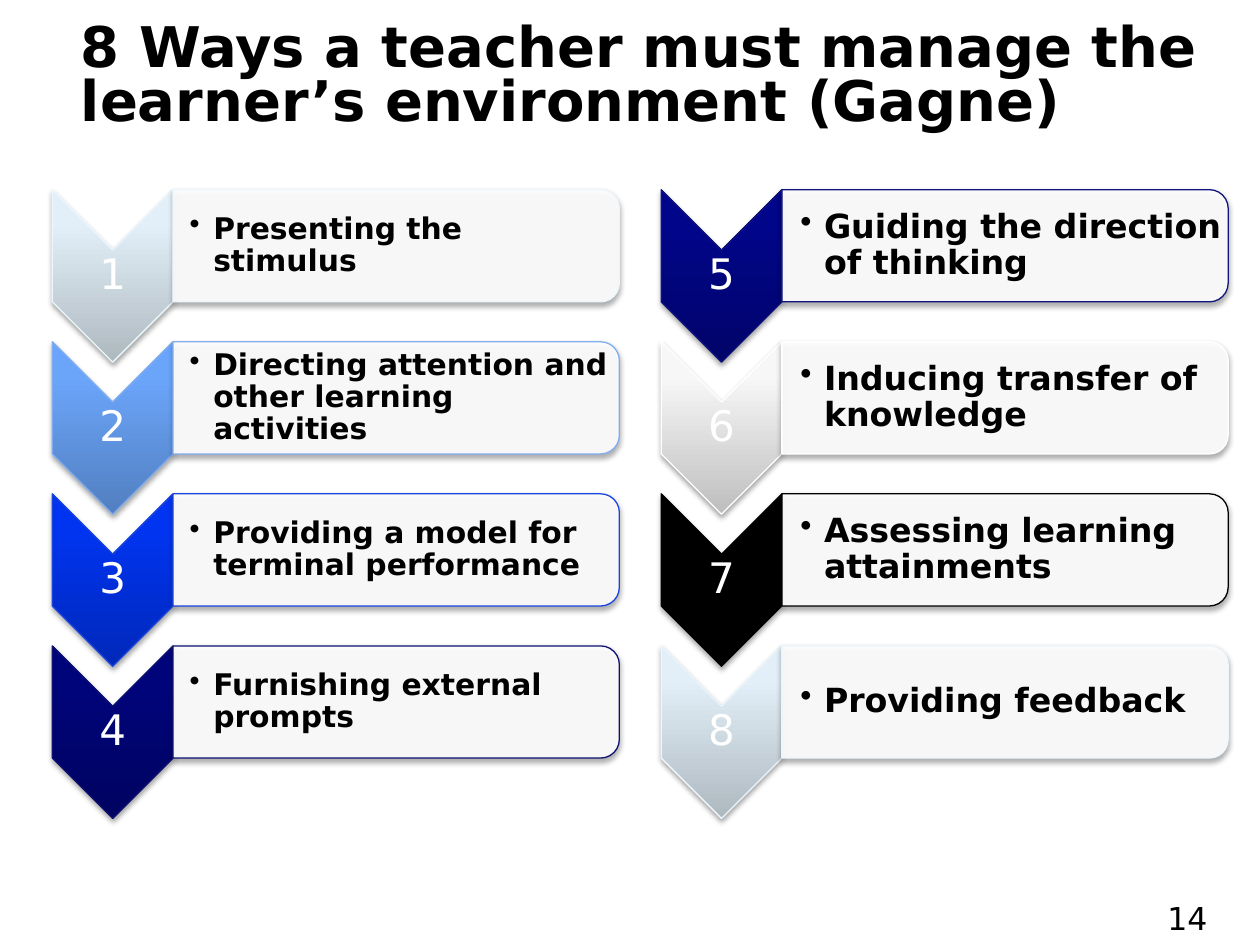
from pptx import Presentation
from pptx.dml.color import RGBColor
from pptx.enum.shapes import MSO_SHAPE
from pptx.enum.text import MSO_ANCHOR, MSO_AUTO_SIZE, PP_ALIGN
from pptx.oxml import parse_xml
from pptx.oxml.ns import nsdecls
from pptx.util import Pt

CHEVRON, ROUNDED = MSO_SHAPE.CHEVRON, MSO_SHAPE.ROUND_2_SAME_RECTANGLE
TOP, MIDDLE = MSO_ANCHOR.TOP, MSO_ANCHOR.MIDDLE
LEFT, CENTER = PP_ALIGN.LEFT, PP_ALIGN.CENTER
NO_AUTOFIT = MSO_AUTO_SIZE.NONE
FONT = "DejaVu Sans"

# Content: text, gradient stops at 0, 80 and 100 %, outline
TITLE = "8 Ways a teacher must manage the learner’s environment (Gagne)"
PAGE_NUMBER = "14"
ICE = ("AEB8BF", "E2EFF8", "E3F0F9"), "ECF6FD"
COLUMNS = [
    dict(left=29.9, size=17, inset=9.5, steps=[
        ("Presenting the stimulus", *ICE),
        ("Directing attention and other learning activities",
         ("527FC0", "6BA5FA", "69A5FE"), "80ADF1"),
        ("Providing a model for terminal performance",
         ("0028B9", "0034F0", "0034F1"), "1A44DE"),
        ("Furnishing external prompts",
         ("00035F", "00047B", "00047C"), "0E1171"),
    ]),
    dict(left=377.8, size=19, inset=10.6, steps=[
        ("Guiding the direction of thinking",
         ("010469", "010589", "00048A"), "11147D"),
        ("Inducing transfer of knowledge",
         ("BEBEBE", "F7F7F7", "F8F8F8"), "FFFFFF"),
        ("Assessing learning attainments", ("000000",) * 3, "000000"),
        ("Providing feedback", *ICE),
    ]),
]

# Layout, in points
FIRST_TOP, ROW_STEP = 108.4, 86.9
CHEVRON_WIDTH, CHEVRON_HEIGHT = 69, 98.6
CARD_WIDTH, CARD_HEIGHT = 255, 64.1


def color(value):
    return RGBColor.from_string(value)


def write(box, text, size, bold=False, ink="000000", align=LEFT, anchor=MIDDLE,
          insets=(7.2, 3.6, 7.2, 3.6), spacing=None, margin=0, bullet=False):
    frame = box.text_frame
    frame.word_wrap = True
    frame.auto_size = NO_AUTOFIT
    frame.vertical_anchor = anchor
    (frame.margin_left, frame.margin_top,
     frame.margin_right, frame.margin_bottom) = map(Pt, insets)
    para = frame.paragraphs[0]
    para.alignment = align
    properties = para._p.get_or_add_pPr()
    properties.set("marL", str(Pt(margin)))
    properties.set("indent", str(Pt(-margin) if bullet else 0))
    if bullet:
        properties.append(parse_xml(f'<a:buChar {nsdecls("a")} char="•"/>'))
    if spacing:
        para.line_spacing = spacing
    span = para.add_run()
    span.text = text
    span.font.name, span.font.size, span.font.bold = FONT, Pt(size), bold
    span.font.color.rgb = color(ink)


def add_text(shapes, left, top, width, height, text, **style):
    box = shapes.add_textbox(Pt(left), Pt(top), Pt(width), Pt(height))
    write(box, text, **style)


def add_turned(shapes, kind, left, top, width, height, outline):
    """Add a shape turned by 90 degrees that covers the given area."""
    shift = (width - height) / 2
    shape = shapes.add_shape(kind, Pt(left + shift), Pt(top - shift),
                             Pt(height), Pt(width))
    shape.rotation = 90
    shape.fill.solid()
    shape.fill.fore_color.rgb = color("FFFFFF")
    shape.line.color.rgb = color(outline)
    shape.line.width = Pt(0.75)
    shape.shadow.inherit = False
    shape._element.spPr.find("{*}effectLst").append(parse_xml(
        f'<a:outerShdw {nsdecls("a")} blurRad="{Pt(3.1)}" dist="{Pt(1.8)}" '
        'dir="5400000" rotWithShape="0"><a:srgbClr val="000000">'
        '<a:alpha val="35000"/></a:srgbClr></a:outerShdw>'))
    return shape


def set_gradient(shape, colors):
    stops = "".join(
        f'<a:gs pos="{place}000"><a:srgbClr val="{value}"/></a:gs>'
        for place, value in zip((0, 80, 100), colors))
    properties = shape._element.spPr
    properties.replace(properties.find("{*}solidFill"), parse_xml(
        f'<a:gradFill {nsdecls("a")} rotWithShape="0"><a:gsLst>{stops}</a:gsLst>'
        '<a:lin ang="16200000" scaled="0"/></a:gradFill>'))


def set_opacity(shape, percent):
    shape._element.spPr.find("{*}solidFill")[0].append(
        parse_xml(f'<a:alpha {nsdecls("a")} val="{percent}000"/>'))


def add_step(shapes, column, top, number, text, colors, outline):
    left = column["left"]
    chevron = add_turned(shapes, CHEVRON, left, top, CHEVRON_WIDTH,
                         CHEVRON_HEIGHT, outline)
    if len(set(colors)) > 1:
        set_gradient(chevron, colors)
    else:
        chevron.fill.fore_color.rgb = color(colors[0])
    add_text(shapes, left, top + CHEVRON_WIDTH / 2, CHEVRON_WIDTH,
             CHEVRON_HEIGHT - CHEVRON_WIDTH, str(number), size=24, ink="FFFFFF",
             align=CENTER, insets=(1.2,) * 4, spacing=0.9)

    card_left = left + CHEVRON_WIDTH
    card = add_turned(shapes, ROUNDED, card_left, top, CARD_WIDTH, CARD_HEIGHT,
                      outline)
    set_opacity(card, 90)
    add_text(shapes, card_left, top + 3, CARD_WIDTH - 3, CARD_HEIGHT - 6, text,
             size=column["size"], bold=True, spacing=0.9, margin=13.5,
             bullet=True, insets=(column["inset"], 0.8, 0.8, 0.8))


def main():
    deck = Presentation()
    deck.slide_width, deck.slide_height = Pt(720), Pt(540)
    page = deck.slides.add_slide(deck.slide_layouts[5])

    # Title
    title = page.shapes.title
    title.left, title.top, title.width, title.height = map(Pt, (24, 12, 684, 66))
    write(title, TITLE, size=32, bold=True, spacing=0.8, margin=15)

    # Two columns of numbered steps
    number = 0
    for column in COLUMNS:
        group = page.shapes.add_group_shape()
        for row, step in enumerate(column["steps"]):
            number += 1
            add_step(group.shapes, column, FIRST_TOP + row * ROW_STEP, number, *step)

    # Page number
    add_text(page.shapes, 660, 510, 60, 19.5, PAGE_NUMBER, size=18, anchor=TOP)

    deck.save("out.pptx")


if __name__ == "__main__":
    main()
